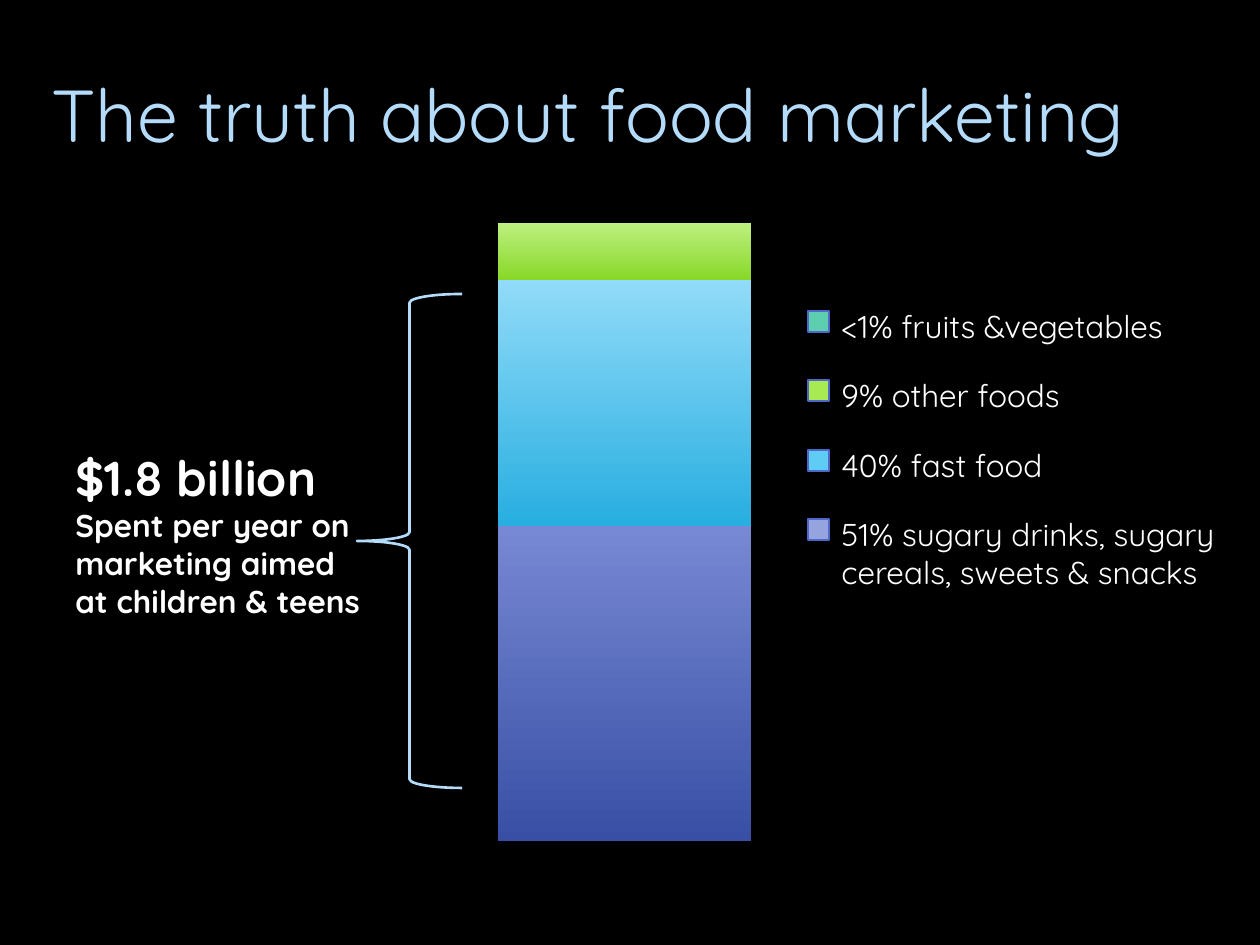
from pptx import Presentation
from pptx.chart.data import CategoryChartData
from pptx.dml.color import RGBColor
from pptx.enum.chart import XL_CHART_TYPE as Chart
from pptx.enum.shapes import MSO_SHAPE as Shape
from pptx.enum.text import MSO_ANCHOR as Anchor, PP_ALIGN as Align
from pptx.oxml import parse_xml
from pptx.oxml.ns import nsdecls
from pptx.util import Pt

PX = 914400 / 126
FONT = "Quicksand"
WHITE, SKY, INDIGO = "FFFFFF", "B4DCFA", "4E67C8"

# value, top colour, bottom colour; from the bottom of the stack up
SERIES = [
    (100, "7789D4", "394FA5"),
    (78, "91DBF8", "28AEE1"),
    (18, "BEF080", "88D829"),
    (2, "8FDFC9", "35B58F"),
]
LEGEND = [
    ("5DCEAF", ["<1% fruits &vegetables"]),
    ("A7EA52", ["9% other foods"]),
    ("5ECCF3", ["40% fast food"]),
    ("95A4DE", ["51% sugary drinks, sugary", "cereals, sweets & snacks"]),
]


def box(*sizes):
    """Turn px lengths into EMU."""
    return [round(size * PX) for size in sizes]


def color(code):
    return RGBColor.from_string(code)


def style(font, size, code, bold=False):
    font.name, font.size, font.bold = FONT, Pt(size), bold
    font.color.rgb = color(code)


def add_title(slide, text):
    title = slide.shapes.title
    title.left, title.top, title.width, title.height = box(39, 63, 1183, 137)
    frame = title.text_frame
    frame.text = text
    frame.vertical_anchor = Anchor.TOP
    para = frame.paragraphs[0]
    para.alignment = Align.LEFT
    style(para.font, 42, SKY)


def add_text(shapes, place, lines, wrap=True):
    """Add a text box; each line is (text, size, bold)."""
    frame = shapes.add_textbox(*box(*place)).text_frame
    frame.word_wrap = wrap
    for i, (text, size, bold) in enumerate(lines):
        para = frame.add_paragraph() if i else frame.paragraphs[0]
        para.text = text
        style(para.font, size, WHITE, bold)


def add_shape(shapes, kind, place, line, width, fill=None):
    shape = shapes.add_shape(kind, *box(*place))
    shape.shadow.inherit = False
    if fill:
        shape.fill.solid()
        shape.fill.fore_color.rgb = color(fill)
    else:
        shape.fill.background()
    shape.line.color.rgb = color(line)
    shape.line.width = Pt(width)


def add_stack(slide):
    data = CategoryChartData()
    data.categories = ["1"]
    for i, (value, _, _) in enumerate(SERIES, 1):
        data.add_series(f"Series {i}", [value])
    chart = slide.shapes.add_chart(
        Chart.COLUMN_STACKED, *box(294, 210, 661, 644), data).chart
    chart.has_legend = chart.has_title = False
    style(chart.font, 18, WHITE)

    axis = chart.value_axis
    axis.minimum_scale, axis.maximum_scale, axis.major_unit = 0, 196, 39
    axis.has_major_gridlines = False
    axis.tick_labels.number_format = "0%"
    axis.tick_labels.number_format_is_linked = False
    axis.visible = chart.category_axis.visible = False

    plot = chart.plots[0]
    plot.gap_width, plot.overlap, plot.vary_by_categories = 150, 100, False
    for series, (_, top, bottom) in zip(plot.series, SERIES):
        fill = series.format.fill
        fill.gradient()
        fill.gradient_angle = 270
        for stop, code in zip(fill.gradient_stops, (top, bottom)):
            stop.color.rgb = color(code)
        series.format.line.fill.background()
    set_inset(chart, 0.02)


def set_inset(chart, gap):
    """Fix the plot area at an equal share from each chart edge."""
    area = chart._chartSpace.chart.plotArea
    for old in area.findall("{*}layout"):
        area.remove(old)
    size = 1 - 2 * gap
    area.insert(0, parse_xml(
        f'<c:layout {nsdecls("c")}><c:manualLayout>'
        '<c:layoutTarget val="inner"/><c:xMode val="edge"/><c:yMode val="edge"/>'
        f'<c:x val="{gap}"/><c:y val="{gap}"/><c:w val="{size}"/><c:h val="{size}"/>'
        '</c:manualLayout></c:layout>'))


def add_legend(slide):
    for i, (fill, lines) in enumerate(LEGEND):
        top = 301 + 139 * i // 2
        shapes = slide.shapes.add_group_shape().shapes
        add_text(shapes, (829, top, 410, 12 + 39 * len(lines)),
                 [(line, 18, False) for line in lines], wrap=False)
        add_shape(shapes, Shape.RECTANGLE, (808, top + 10, 21, 21),
                  INDIGO, 0.75, fill)


def main():
    deck = Presentation()
    deck.slide_width, deck.slide_height = box(1260, 945)
    slide = deck.slides.add_slide(deck.slide_layouts[5])
    slide.background.fill.solid()
    slide.background.fill.fore_color.rgb = color("000000")

    add_title(slide, "The truth about food marketing")
    add_stack(slide)
    add_shape(slide.shapes, Shape.LEFT_BRACE, (357, 294, 105, 494), SKY, 1.5)
    add_text(slide.shapes, (63, 441, 315, 186), [
        ("$1.8 billion", 28, True),
        ("Spent per year on marketing aimed at children & teens", 18, True),
    ])
    add_legend(slide)
    deck.save("out.pptx")


if __name__ == "__main__":
    main()
